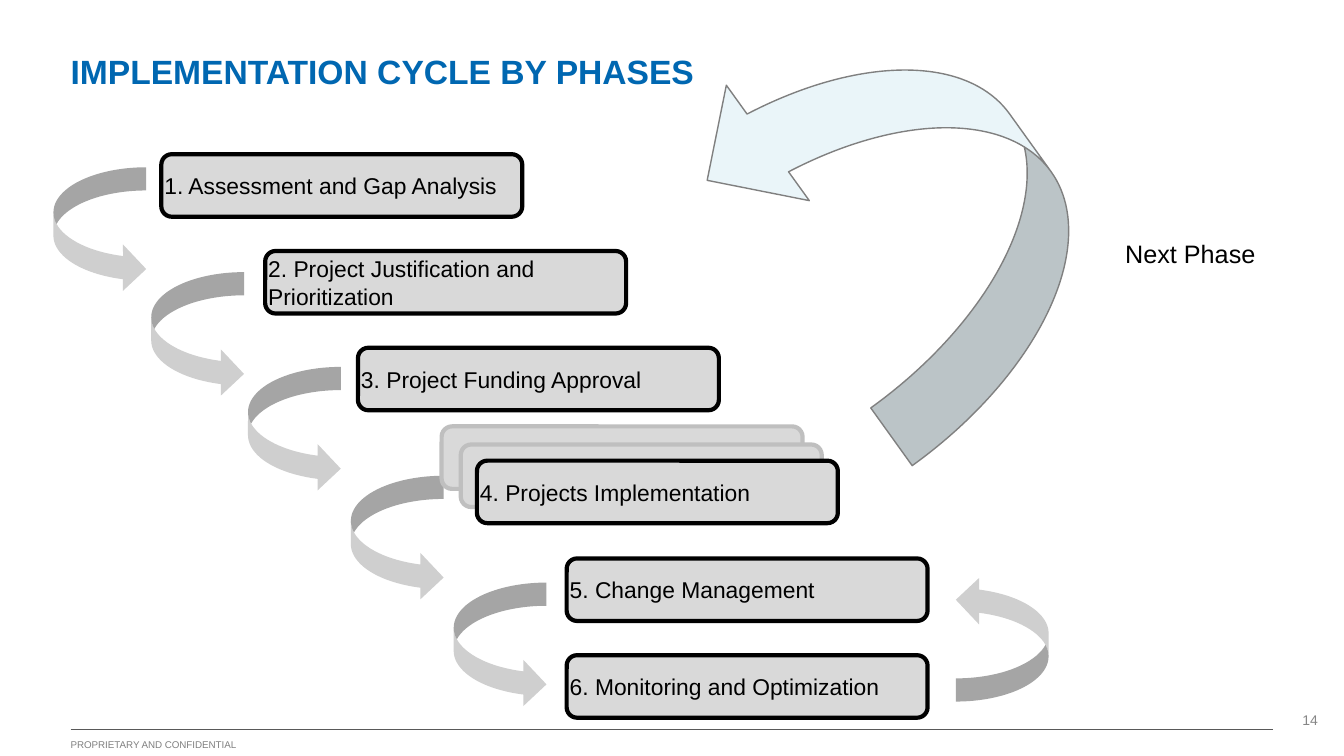
import pptx
import pptx.util
import pptx.dml.color
import pptx.enum.shapes
import pptx.enum.text

KIND = pptx.enum.shapes.MSO_SHAPE
ALIGN = pptx.enum.text.PP_ALIGN
ANCHOR = pptx.enum.text.MSO_ANCHOR
RGB = pptx.dml.color.RGBColor.from_string

# Theme: colours, type sizes and line widths
THEME = {
    "blue": "0067B1", "black": "000000", "foot": "808080", "page": "868686",
    "rule": "595959", "box": "D9D9D9", "ghost": "BFBFBF", "arrow": "CFCFCF",
    "sky": "EAF5F9", "edge": "808080",
    "title": 24, "label": 18, "step": 16.3, "number": 10, "small": 7,
    "thin": 1, "thick": 3, "font": "Arial",
}

# Grid: square cells, a tenth of an inch each
COLS, ROWS = 133.3, 75
CELL = pptx.util.Inches(0.1)

deck = pptx.Presentation()
deck.slide_width, deck.slide_height = round(COLS * CELL), round(ROWS * CELL)
slide = deck.slides.add_slide(deck.slide_layouts[6])
shapes = slide.shapes


def write(item, text, size, ink="black", bold=False, align=ALIGN.LEFT, anchor=ANCHOR.MIDDLE):
    frame = item.text_frame
    form = {"word_wrap": True, "vertical_anchor": anchor, "margin_left": 0,
            "margin_right": 0, "margin_top": 0, "margin_bottom": 0}
    for name, value in form.items():
        setattr(frame, name, value)
    para = frame.paragraphs[0]
    para.alignment = align
    run = para.add_run()
    run.text = text
    for name, value in {"name": THEME["font"], "size": pptx.util.Pt(THEME[size]), "bold": bold}.items():
        setattr(run.font, name, value)
    run.font.color.rgb = RGB(THEME[ink])
    return para


def draw(kind, spot, fill, line=None, width="thin", turn=0):
    item = shapes.add_shape(kind, *(round(n * CELL) for n in spot))
    item.shadow.inherit = False
    item.rotation = turn
    item.fill.solid()
    item.fill.fore_color.rgb = RGB(THEME[fill])
    if line:
        item.line.color.rgb = RGB(THEME[line])
        item.line.width = pptx.util.Pt(THEME[width])
    else:
        item.line.fill.background()
    return item


# Footer rule
rule = shapes.add_connector(pptx.enum.shapes.MSO_CONNECTOR.STRAIGHT,
                            *(round(n * CELL) for n in (7, 72.4, 126.3, 72.4)))
rule.line.color.rgb = RGB(THEME["rule"])
rule.line.width = pptx.util.Pt(THEME["thin"])
props = rule._element.spPr
props.append(props.makeelement(pptx.oxml.ns.qn("a:effectLst"), {}))

# Title, footer, page number and side label
texts = [
    ((7, 3.5, 100.2, 7.6), "IMPLEMENTATION CYCLE BY PHASES",
     {"size": "title", "ink": "blue", "bold": True}),
    ((7, 73.2, 18.2, 1.2), "PROPRIETARY AND CONFIDENTIAL",
     {"size": "small", "ink": "foot", "anchor": ANCHOR.BOTTOM}),
    ((128, 70.8, 2.7, 1.5), "14",
     {"size": "number", "ink": "page", "align": ALIGN.RIGHT, "anchor": ANCHOR.BOTTOM}),
    ((111.6, 23.6, 16.4, 3.9), "Next Phase", {"size": "label", "anchor": ANCHOR.TOP}),
]
for spot, text, form in texts:
    para = write(shapes.add_textbox(*(round(n * CELL) for n in spot)), text, **form)
    if form["size"] == "title":
        para.line_spacing = 0.9

# Arrows from step to step, and the one back from the last step
hops = [(5.3, 16.6, 0), (15, 27, 0), (24.6, 36.4, 0), (34.8, 47.2, 0),
        (45, 57.8, 0), (94.8, 57.2, 180)]
for col, row, turn in hops:
    draw(KIND.CURVED_RIGHT_ARROW, (col, row, 9.2, 12.4), "arrow", turn=turn)

# Large arrow back to the next phase
draw(KIND.CURVED_RIGHT_ARROW, (75.6, 0, 28.2, 41.9), "sky", "edge", turn=144.3)

# Step boxes; those without text are the stack behind step 4
steps = [
    (16, 15.3, "1. Assessment and Gap Analysis"),
    (26.3, 24.9, "2. Project Justification and Prioritization"),
    (35.5, 34.5, "3. Project Funding Approval"),
    (43.8, 42.3, None),
    (45.7, 44.1, None),
    (47.3, 45.7, "4. Projects Implementation"),
    (56.2, 55.4, "5. Change Management"),
    (56.2, 65, "6. Monitoring and Optimization"),
]
for col, row, text in steps:
    box = draw(KIND.ROUNDED_RECTANGLE, (col, row, 35.8, 6.2), "box",
               "black" if text else "ghost", "thick")
    if text:
        write(box, text, "step")

deck.save("out.pptx")
